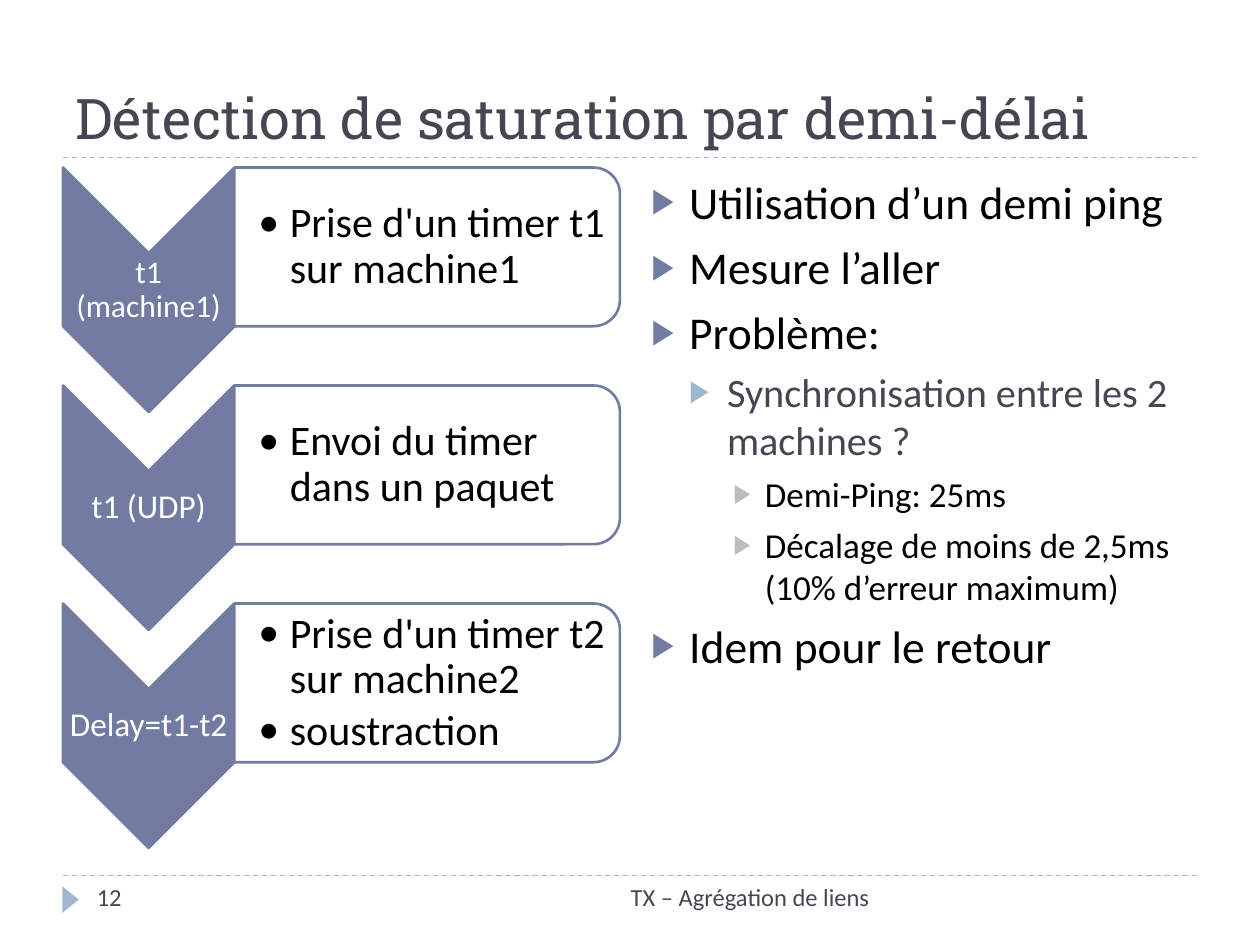
import pptx
import pptx.dml.color
import pptx.enum.dml
import pptx.enum.shapes
import pptx.enum.text
import pptx.oxml.ns
import pptx.util
from dataclasses import dataclass
from lxml import etree

Inches = pptx.util.Inches
Pt = pptx.util.Pt
qn = pptx.oxml.ns.qn
Shape = pptx.enum.shapes.MSO_SHAPE
Align = pptx.enum.text.PP_ALIGN
Anchor = pptx.enum.text.MSO_ANCHOR


@dataclass(frozen=True)
class Theme:
    main: str = "727CA3"
    soft: str = "9FB8CD"
    grey: str = "BDBDBD"
    dark: str = "464653"
    black: str = "000000"
    white: str = "FFFFFF"
    head: str = "Roboto Slab"
    body: str = "Calibri"
    title: int = 32
    card: int = 24
    foot: int = 14


THEME = Theme()

LEVELS = [
    dict(size=26, color=THEME.black, mark=THEME.main, left=0.3, hang=0.3, before=6),
    dict(size=23, color=THEME.dark, mark=THEME.soft, left=0.6, hang=0.3, before=5),
    dict(size=20, color=THEME.black, mark=THEME.grey, left=0.9, hang=0.25, before=5),
]

POINTS = [
    (0, "Utilisation d’un demi ping"),
    (0, "Mesure l’aller"),
    (0, "Problème:"),
    (1, "Synchronisation entre les 2 machines ?"),
    (2, "Demi-Ping: 25ms"),
    (2, "Décalage de moins de 2,5ms (10% d’erreur maximum)"),
    (0, "Idem pour le retour"),
]

STEPS = [
    ("t1 (machine1)", 18, ["Prise d'un timer t1 sur machine1"]),
    ("t1 (UDP)", 19, ["Envoi du timer dans un paquet"]),
    ("Delay=t1-t2", 19, ["Prise d'un timer t2 sur machine2", "soustraction"]),
]


def assign(item, values):
    for name, value in values.items():
        setattr(item, name, value)


def rgb(color):
    return pptx.dml.color.RGBColor.from_string(color)


def place(shape, left, top, width, height):
    assign(shape, dict(left=Inches(left), top=Inches(top),
                       width=Inches(width), height=Inches(height)))


def setup(frame, anchor=Anchor.TOP, inset=None):
    assign(frame, dict(word_wrap=True, vertical_anchor=anchor,
                       auto_size=pptx.enum.text.MSO_AUTO_SIZE.NONE))
    if inset:
        sides = ("left", "top", "right", "bottom")
        assign(frame, {f"margin_{side}": Inches(gap) for side, gap in zip(sides, inset)})


def write(frame, index, text, size, color, font=THEME.body, **layout):
    para = frame.paragraphs[0] if index == 0 else frame.add_paragraph()
    assign(para, layout)
    run = para.add_run()
    run.text = text
    assign(run.font, dict(size=Pt(size), name=font))
    run.font.color.rgb = rgb(color)
    return para


def bullet(para, mark, color, scale, left, hang):
    props = para._p.get_or_add_pPr()
    props.set("marL", str(Inches(left)))
    props.set("indent", str(-Inches(hang)))
    tint = etree.SubElement(props, qn("a:buClr"))
    etree.SubElement(tint, qn("a:srgbClr"), val=color)
    etree.SubElement(props, qn("a:buSzPct"), val=str(scale * 1000))
    etree.SubElement(props, qn("a:buFont"), typeface=THEME.body)
    etree.SubElement(props, qn("a:buChar"), char=mark)


def box(slide, left, top, width, height, **frame):
    shape = slide.shapes.add_textbox(*map(Inches, (left, top, width, height)))
    setup(shape.text_frame, **frame)
    return shape.text_frame


def turned(slide, kind, mid, width, height, fill, line=None):
    x, y = mid
    area = map(Inches, (x - width / 2, y - height / 2, width, height))
    shape = slide.shapes.add_shape(kind, *area)
    shape.rotation = 90
    shape.shadow.inherit = False
    shape.fill.solid()
    shape.fill.fore_color.rgb = rgb(fill)
    if line:
        shape.line.color.rgb = rgb(line)
        shape.line.width = Pt(1.5)
    else:
        shape.line.fill.background()


def rule(slide, y):
    ends = map(Inches, (0.5, y, 9.5, y))
    line = slide.shapes.add_connector(pptx.enum.shapes.MSO_CONNECTOR.STRAIGHT, *ends)
    line.line.color.rgb = rgb(THEME.soft)
    assign(line.line, dict(width=Pt(0.75), dash_style=pptx.enum.dml.MSO_LINE.DASH))
    etree.SubElement(line._element.spPr, qn("a:effectLst"))


def step(slide, top, label, size, items):
    turned(slide, Shape.CHEVRON, (1.18, top + 0.97), 1.94, 1.36, THEME.main, THEME.main)
    frame = box(slide, 0.5, top + 0.68, 1.36, 0.58,
                anchor=Anchor.MIDDLE, inset=[0.01] * 4)
    write(frame, 0, label, size, THEME.white, alignment=Align.CENTER, line_spacing=0.9)

    turned(slide, Shape.ROUND_2_SAME_RECTANGLE, (3.39, top + 0.63), 1.26, 3.06,
           THEME.white, THEME.main)
    frame = box(slide, 1.86, top + 0.06, 3, 1.14,
                anchor=Anchor.MIDDLE, inset=(0.19, 0.02, 0.02, 0.02))
    for i, text in enumerate(items):
        para = write(frame, i, text, THEME.card, THEME.black,
                     line_spacing=0.9, space_after=Pt(3.6))
        bullet(para, "•", THEME.black, 100, 0.25, 0.25)


def points(holder):
    place(holder, 5.07, 1.33, 4.42, 5.4)
    frame = holder.text_frame
    setup(frame)
    for i, (level, text) in enumerate(POINTS):
        look = LEVELS[level]
        para = write(frame, i, text, look["size"], look["color"],
                     level=level, space_before=Pt(look["before"]))
        bullet(para, "▶", look["mark"], 76, look["left"], look["hang"])


def title(holder, text):
    place(holder, 0.5, 0.25, 9, 1)
    setup(holder.text_frame, Anchor.BOTTOM)
    write(holder.text_frame, 0, text, THEME.title, THEME.dark, THEME.head,
          alignment=Align.LEFT)


def footer(slide):
    turned(slide, Shape.ISOSCELES_TRIANGLE, (0.56, 7.14), 0.21, 0.13, THEME.soft)
    notes = [(3.17, 3.83, "TX – Agrégation de liens", Align.RIGHT),
             (0.67, 2.17, "12", Align.LEFT)]
    for left, width, text, align in notes:
        frame = box(slide, left, 6.95, width, 0.4)
        write(frame, 0, text, THEME.foot, THEME.dark, alignment=align)


def main():
    deck = pptx.Presentation()
    assign(deck, dict(slide_width=Inches(10), slide_height=Inches(7.5)))
    slide = deck.slides.add_slide(deck.slide_layouts[1])
    for y in (6.95, 1.25):
        rule(slide, y)
    title(slide.shapes.title, "Détection de saturation par demi-délai")
    for i, (label, size, items) in enumerate(STEPS):
        step(slide, 1.33 + 1.73 * i, label, size, items)
    points(slide.placeholders[1])
    footer(slide)
    deck.save("out.pptx")


if __name__ == "__main__":
    main()
